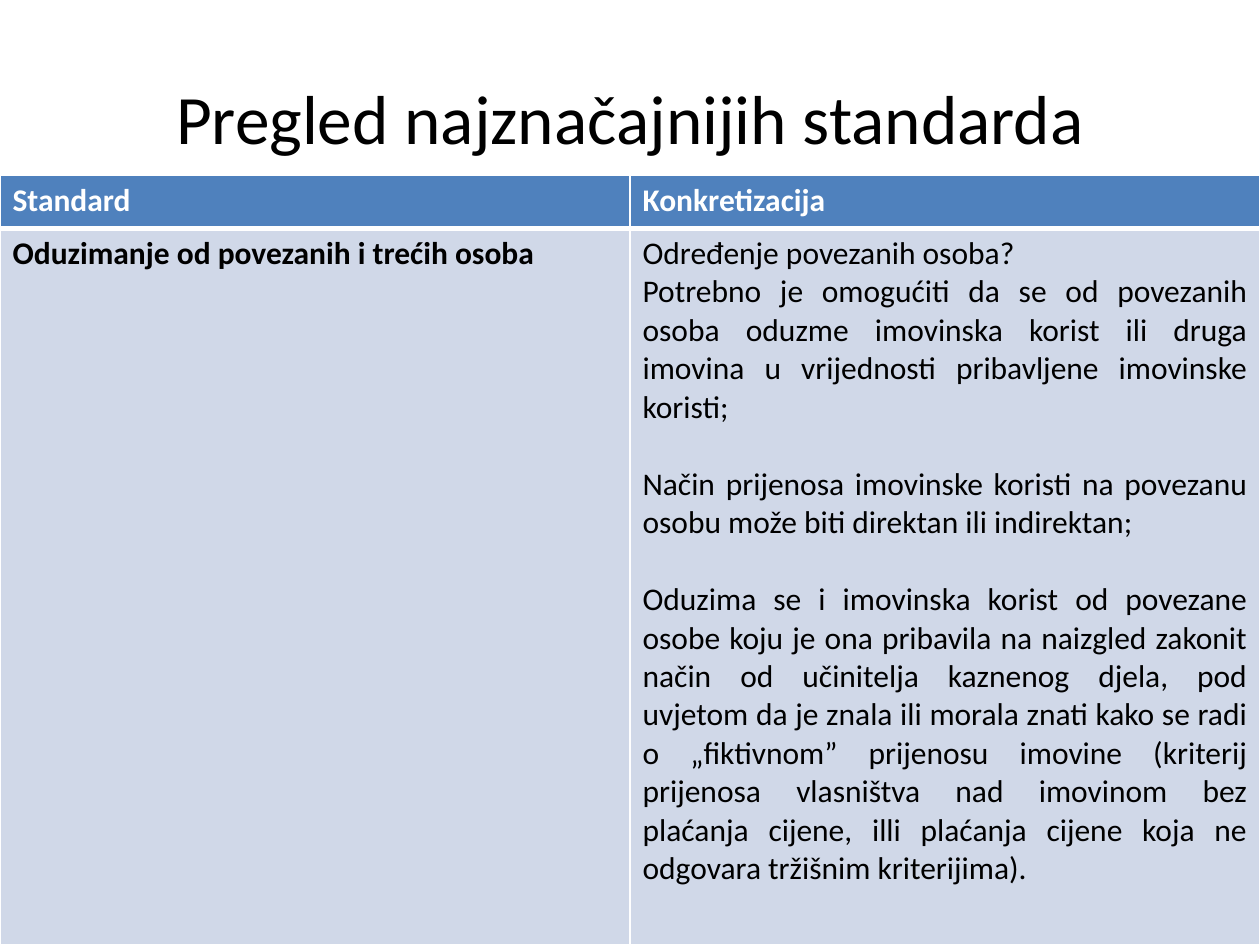
from lxml.etree import SubElement
from pptx import Presentation
from pptx.dml.color import RGBColor
from pptx.enum.text import MSO_ANCHOR as Anchor, PP_ALIGN as Align
from pptx.oxml.ns import qn
from pptx.util import Cm, Pt

WHITE = RGBColor(0xFF, 0xFF, 0xFF)
BLACK = RGBColor(0, 0, 0)
HEADER_BLUE = RGBColor(0x4F, 0x81, 0xBD)
BODY_BLUE = RGBColor(0xD0, 0xD8, 0xE8)

SLIDE_WIDTH, SLIDE_HEIGHT = 25.4, 19.05
TABLE_TOP = 3.53
HEADER_HEIGHT = 1.07
TITLE_ONLY = 5

TITLE = "Pregled najznačajnijih standarda"
HEADERS = ["Standard", "Konkretizacija"]
STANDARD = "Oduzimanje od povezanih i trećih osoba"
QUESTION = "Određenje povezanih osoba?"
DETAILS = [
    "Potrebno je omogućiti da se od povezanih osoba oduzme imovinska korist "
    "ili druga imovina u vrijednosti pribavljene imovinske koristi;",
    "Način prijenosa imovinske koristi na povezanu osobu može biti direktan "
    "ili indirektan;",
    "Oduzima se i imovinska korist od povezane osobe koju je ona pribavila na "
    "naizgled zakonit način od učinitelja kaznenog djela, pod uvjetom da je "
    "znala ili morala znati kako se radi o „fiktivnom” prijenosu imovine "
    "(kriterij prijenosa vlasništva nad imovinom bez plaćanja cijene, illi "
    "plaćanja cijene koja ne odgovara tržišnim kriterijima).",
]


class SlideBuilder:
    font = "Calibri"
    title_size = Pt(39.6)
    text_size = Pt(18)
    paragraph_gap = Pt(22)

    def __init__(self, slide):
        self.slide = slide

    def add_run(self, paragraph, text, size, color, bold=False):
        run = paragraph.add_run()
        run.text = text
        run.font.name = self.font
        run.font.size = size
        run.font.bold = bold
        run.font.color.rgb = color

    def title(self, text, left, top, width, height):
        shape = self.slide.shapes.title
        shape.left, shape.top = Cm(left), Cm(top)
        shape.width, shape.height = Cm(width), Cm(height)
        frame = shape.text_frame
        frame.word_wrap = True
        frame.vertical_anchor = Anchor.MIDDLE
        paragraph = frame.paragraphs[0]
        paragraph.alignment = Align.CENTER
        self.add_run(paragraph, text, self.title_size, BLACK)

    def table(self, left, top, column_widths, row_heights):
        table = self.slide.shapes.add_table(
            len(row_heights), len(column_widths), Cm(left), Cm(top),
            Cm(sum(column_widths)), Cm(sum(row_heights))).table
        table.horz_banding = False
        for column, width in zip(table.columns, column_widths):
            column.width = Cm(width)
        for row, height in zip(table.rows, row_heights):
            row.height = Cm(height)
        return table

    def borders(self, cell, top, bottom):
        properties = cell._tc.get_or_add_tcPr()
        for side, width in (("L", 1), ("R", 1), ("T", top), ("B", bottom)):
            line = SubElement(properties, qn(f"a:ln{side}"), w=str(Pt(width)))
            fill = SubElement(line, qn("a:solidFill"))
            SubElement(fill, qn("a:srgbClr"), val=str(WHITE))

    def cell(self, cell, fill, color, paragraphs, top=1, bottom=1, bold=False):
        self.borders(cell, top, bottom)
        cell.fill.solid()
        cell.fill.fore_color.rgb = fill
        frame = cell.text_frame
        for index, (text, alignment, spaced) in enumerate(paragraphs):
            paragraph = frame.add_paragraph() if index else frame.paragraphs[0]
            paragraph.alignment = alignment
            if spaced:
                paragraph.space_before = self.paragraph_gap
            self.add_run(paragraph, text, self.text_size, color, bold)


def main():
    presentation = Presentation()
    presentation.slide_width = Cm(SLIDE_WIDTH)
    presentation.slide_height = Cm(SLIDE_HEIGHT)
    slide = presentation.slides.add_slide(presentation.slide_layouts[TITLE_ONLY])
    builder = SlideBuilder(slide)

    builder.title(TITLE, 1.27, 0.76, 22.86, 3.18)
    table = builder.table(0, TABLE_TOP, [SLIDE_WIDTH / 2] * 2,
                          [HEADER_HEIGHT, SLIDE_HEIGHT - TABLE_TOP - HEADER_HEIGHT])
    for column, header in enumerate(HEADERS):
        builder.cell(table.cell(0, column), HEADER_BLUE, WHITE,
                     [(header, Align.LEFT, False)], bottom=3, bold=True)
    builder.cell(table.cell(1, 0), BODY_BLUE, BLACK,
                 [(STANDARD, Align.LEFT, False)], top=3, bold=True)
    details = [(text, Align.JUSTIFY, index > 0) for index, text in enumerate(DETAILS)]
    builder.cell(table.cell(1, 1), BODY_BLUE, BLACK,
                 [(QUESTION, Align.LEFT, False)] + details, top=3)

    presentation.save("out.pptx")


if __name__ == "__main__":
    main()
